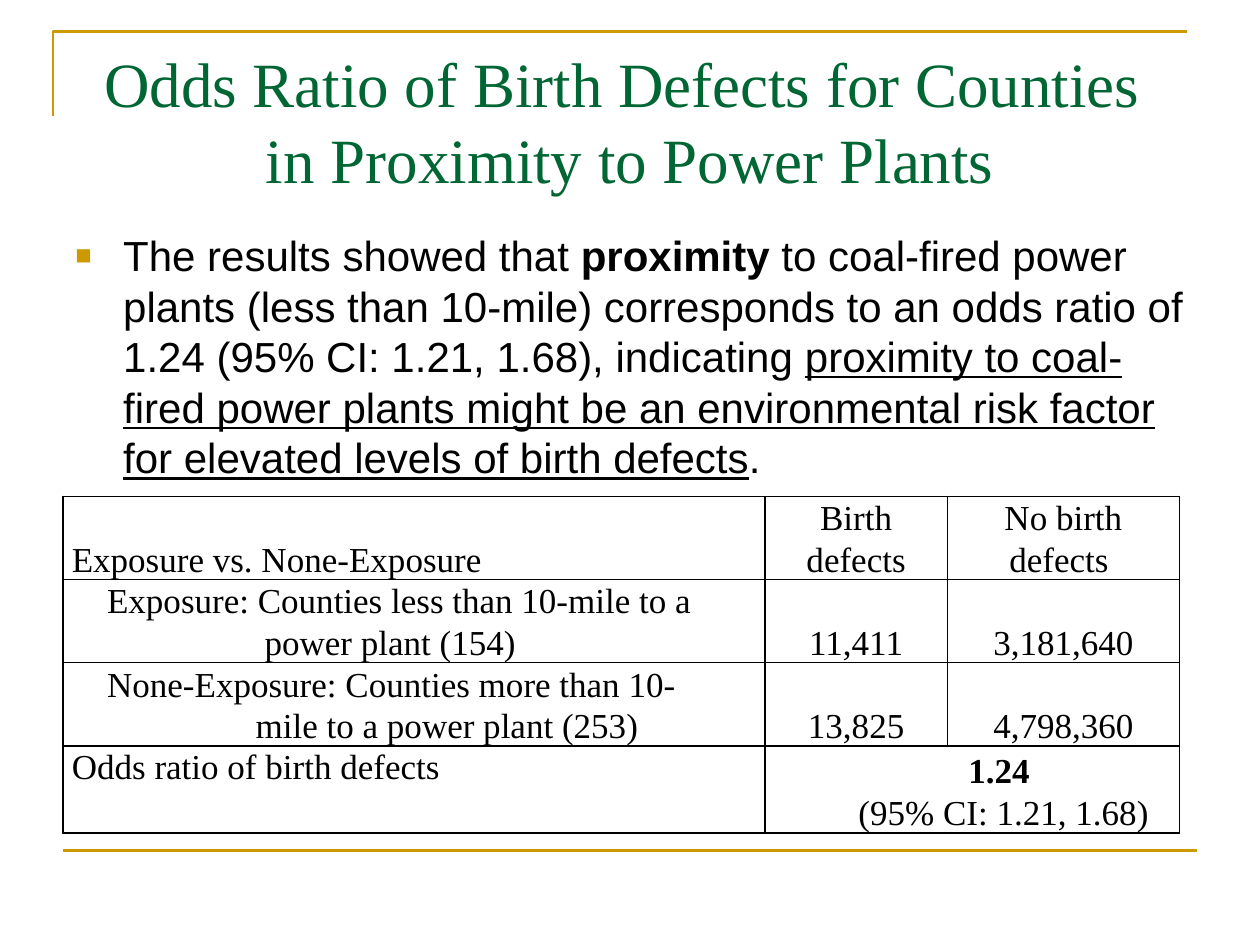
from lxml import etree
from pptx import Presentation
from pptx.dml.color import RGBColor
from pptx.enum.shapes import MSO_CONNECTOR
from pptx.enum.text import MSO_ANCHOR, PP_ALIGN
from pptx.oxml import parse_xml
from pptx.oxml.ns import nsdecls, qn
from pptx.util import Inches, Pt

GOLD = RGBColor(0xCC, 0x99, 0x00)
GREEN = RGBColor(0x00, 0x66, 0x33)
BLACK = RGBColor(0x00, 0x00, 0x00)
LEFT, CENTER = PP_ALIGN.LEFT, PP_ALIGN.CENTER
TOP, BOTTOM = MSO_ANCHOR.TOP, MSO_ANCHOR.BOTTOM
SERIF, SANS = "Times New Roman", "Arial"


def format_paragraph(p, font, size, color, spacing, align=LEFT):
    p.alignment = align
    p.line_spacing = Pt(spacing)
    for r in p.runs:
        r.font.name = font
        r.font.size = Pt(size)
        r.font.color.rgb = color


def add_text_box(s, left, top, width, height, margin_top):
    tf = s.shapes.add_textbox(Inches(left), Inches(top), Inches(width), Inches(height)).text_frame
    tf.word_wrap = True
    tf.vertical_anchor = TOP
    tf.margin_top = Inches(margin_top)
    tf.margin_right = Inches(0.05)
    return tf


prs = Presentation()
prs.slide_width = Inches(10)
prs.slide_height = Inches(7.5)
s = prs.slides.add_slide(prs.slide_layouts[6])

fb = s.shapes.build_freeform(Inches(0.42), Inches(0.92))
fb.add_line_segments([(Inches(0.42), Inches(0.25)), (Inches(9.42), Inches(0.25))], close=False)
corner = fb.convert_to_shape()
corner.shadow.inherit = False
corner.fill.background()

rule = s.shapes.add_connector(MSO_CONNECTOR.STRAIGHT, Inches(0.5), Inches(6.75), Inches(9.5), Inches(6.75))
etree.SubElement(rule._element.spPr, qn("a:effectLst"))
for sp in (corner, rule):
    sp.line.color.rgb = GOLD
    sp.line.width = Pt(1.5)

tf = add_text_box(s, 0.5, 0.3, 9, 1.25, 0.05)
tf.margin_left = Inches(0.05)
p = tf.paragraphs[0]
p.text = "Odds Ratio of Birth Defects for Counties \vin Proximity to Power Plants"
format_paragraph(p, SERIF, 36, GREEN, 43.4, CENTER)

tf = add_text_box(s, 0.5, 1.75, 9, 1.81, 0.07)
p = tf.paragraphs[0]
for text, bold, underline in [
    ("The results showed that ", False, False),
    ("proximity", True, False),
    (" to coal-fired power plants (less than 10-mile) corresponds to an odds ratio of "
     "1.24 (95% CI: 1.21, 1.68), indicating ", False, False),
    ("proximity to coal-fired power plants might be an environmental risk factor "
     "for elevated levels of birth defects", False, True),
    (".", False, False),
]:
    r = p.add_run()
    r.text = text
    r.font.bold = bold
    r.font.underline = underline
pPr = p._p.get_or_add_pPr()
pPr.set("marL", str(Inches(0.38)))
pPr.set("indent", str(Inches(-0.38)))
for xml in (
    f'<a:buClr {nsdecls("a")}><a:srgbClr val="{GOLD}"/></a:buClr>',
    f'<a:buSzPct {nsdecls("a")} val="65000"/>',
    f'<a:buFont {nsdecls("a")} typeface="{SANS}"/>',
    f'<a:buChar {nsdecls("a")} char="■"/>',
):
    pPr.append(parse_xml(xml))
format_paragraph(p, SANS, 24, BLACK, 28.9)

rows = [
    ["Exposure vs. None-Exposure", "Birth defects", "No birth defects "],
    ["Exposure: Counties less than 10-mile to a\npower plant (154)", "11,411", "3,181,640"],
    ["None-Exposure: Counties more than 10-\nmile to a power plant (253)", "13,825", "4,798,360"],
    ["Odds ratio of birth defects", "1.24 \n(95% CI: 1.21, 1.68)", ""],
]
indents = {(1, 0): (0.28, 1.53), (2, 0): (0.28, 1.46), (3, 1): (0.5, 0.5)}
table = s.shapes.add_table(4, 3, Inches(0.5), Inches(3.94), Inches(8.86), Inches(2.67)).table
table.first_row = False
table.horz_banding = False
for column, width in zip(table.columns, (5.57, 1.45, 1.84)):
    column.width = Inches(width)
for row, height in zip(table.rows, (0.66, 0.66, 0.66, 0.69)):
    row.height = Inches(height)
table.cell(3, 1).merge(table.cell(3, 2))

for i, texts in enumerate(rows):
    for j, text in enumerate(texts):
        cell = table.cell(i, j)
        cell.margin_left = cell.margin_right = Inches(0.07)
        cell.margin_top = cell.margin_bottom = 0
        cell.vertical_anchor = TOP if (i, j) == (3, 0) else BOTTOM
        tcPr = cell._tc.get_or_add_tcPr()
        for side in ("lnL", "lnR", "lnT", "lnB"):
            tcPr.append(parse_xml(
                f'<a:{side} {nsdecls("a")} w="{Pt(1)}"><a:solidFill>'
                f'<a:srgbClr val="{BLACK}"/></a:solidFill></a:{side}>'))
        cell.fill.background()
        if not text:
            continue
        cell.text_frame.text = text
        for k, p in enumerate(cell.text_frame.paragraphs):
            format_paragraph(p, SERIF, 20, BLACK, 23.6, CENTER if j else LEFT)
            if (i, j) in indents:
                p._p.get_or_add_pPr().set("marL", str(Inches(indents[i, j][k])))
            p.runs[0].font.bold = (i, j, k) == (3, 1, 0)

prs.save("out.pptx")
